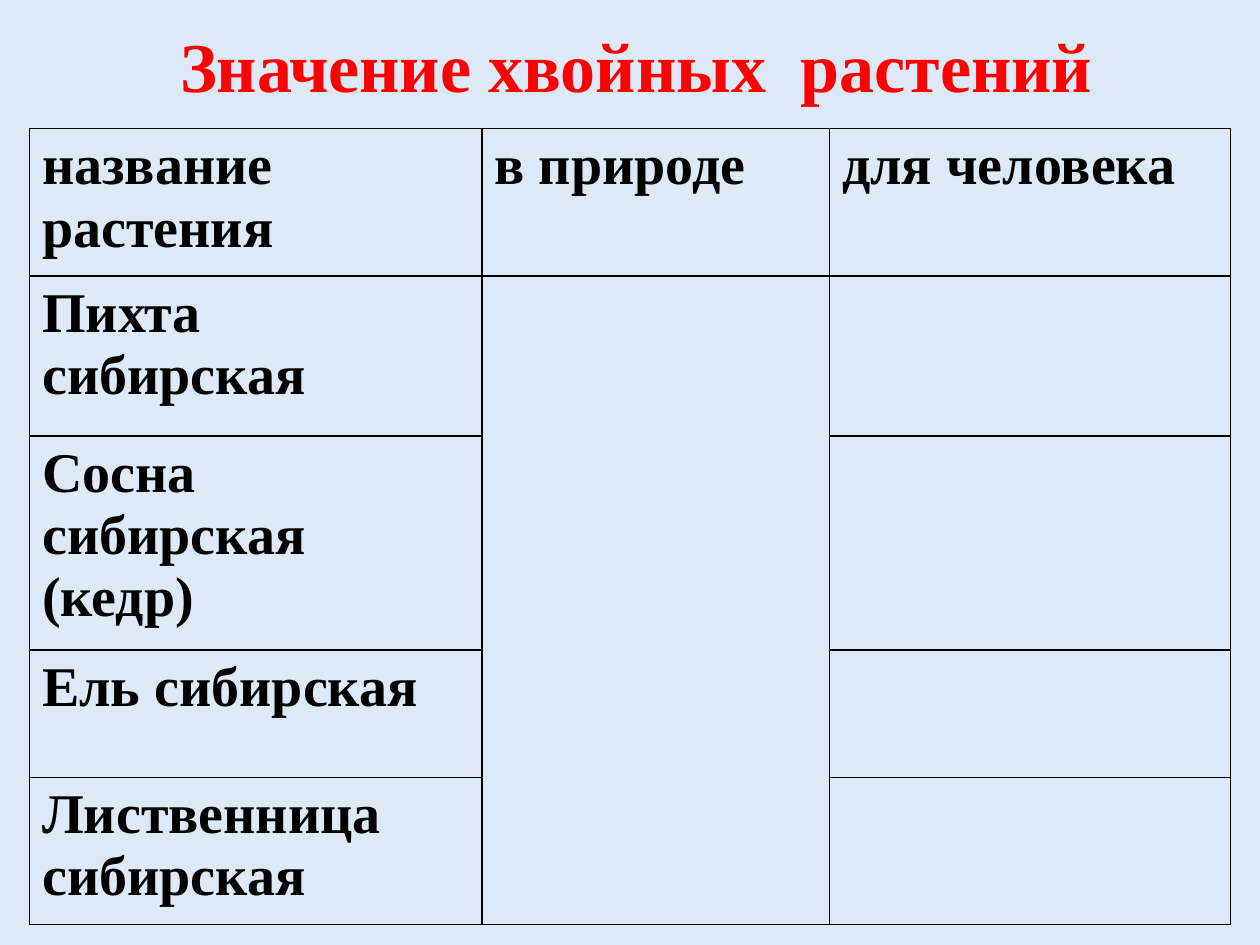
from dataclasses import dataclass

from lxml import etree
from pptx import Presentation
from pptx import util as u
from pptx.dml.color import RGBColor
from pptx.enum import text
from pptx.oxml.ns import qn


@dataclass(frozen=True)
class Theme:
    font: str = "Times New Roman"
    background: str = "DEE9F7"
    heading: str = "FF0000"
    ink: str = "000000"
    heading_size: int = 40
    body_size: int = 32
    rule: int = 1


THEME = Theme()
HEADING = "Значение хвойных  растений"
HEADERS = ("название растения", "в природе", "для человека")
PLANTS = (
    "Пихта сибирская",
    "Сосна сибирская (кедр)",
    "Ель сибирская",
    "Лиственница сибирская",
)
COLUMNS = (3.59, 2.76, 3.18)
ROWS = (1.17, 1.27, 1.7, 1.01, 0.93)
WIDTH, HEIGHT = 10, 7.5
HEADING_HEIGHT = 1.02
HEADING_LEFT = 0.55
WRAP_MARGIN = 0.15


def style(paragraph, size, color):
    for run in paragraph.runs:
        run.font.name = THEME.font
        run.font.size = u.Pt(size)
        run.font.bold = True
        run.font.color.rgb = RGBColor.from_string(color)


def add_borders(cell):
    properties = cell._tc.get_or_add_tcPr()
    for position, edge in enumerate(("lnL", "lnR", "lnT", "lnB")):
        line = etree.Element(qn(f"a:{edge}"), w=str(u.Pt(THEME.rule)))
        fill = etree.SubElement(line, qn("a:solidFill"))
        etree.SubElement(fill, qn("a:srgbClr"), val=THEME.ink)
        properties.insert(position, line)


def add_heading(slide):
    heading = slide.shapes.add_textbox(
        u.Inches(HEADING_LEFT), 0, u.Inches(WIDTH - 1), u.Inches(HEADING_HEIGHT)
    ).text_frame
    heading.word_wrap = True
    heading.vertical_anchor = text.MSO_ANCHOR.MIDDLE
    heading.text = HEADING
    heading.paragraphs[0].alignment = text.PP_ALIGN.CENTER
    style(heading.paragraphs[0], THEME.heading_size, THEME.heading)


def add_plants(slide):
    contents = [HEADERS] + [(plant, "", "") for plant in PLANTS]
    left = (WIDTH - sum(COLUMNS)) / 2
    plants = slide.shapes.add_table(
        len(ROWS), len(COLUMNS), u.Inches(left), u.Inches(HEADING_HEIGHT),
        u.Inches(sum(COLUMNS)), u.Inches(sum(ROWS)),
    ).table
    plants.first_row = plants.horz_banding = False
    for column, width in zip(plants.columns, COLUMNS):
        column.width = u.Inches(width)
    for row, height, words in zip(plants.rows, ROWS, contents):
        row.height = u.Inches(height)
        for cell, word in zip(row.cells, words):
            cell.fill.background()
            add_borders(cell)
            if word:
                cell.text_frame.text = word
                style(cell.text_frame.paragraphs[0], THEME.body_size, THEME.ink)
        row.cells[0].margin_right = u.Inches(WRAP_MARGIN)
    plants.cell(1, 1).merge(plants.cell(len(PLANTS), 1))


def main():
    deck = Presentation()
    deck.slide_width, deck.slide_height = u.Inches(WIDTH), u.Inches(HEIGHT)
    slide = deck.slides.add_slide(deck.slide_layouts[6])
    slide.background.fill.solid()
    slide.background.fill.fore_color.rgb = RGBColor.from_string(THEME.background)
    add_heading(slide)
    add_plants(slide)
    deck.save("out.pptx")


if __name__ == "__main__":
    main()
